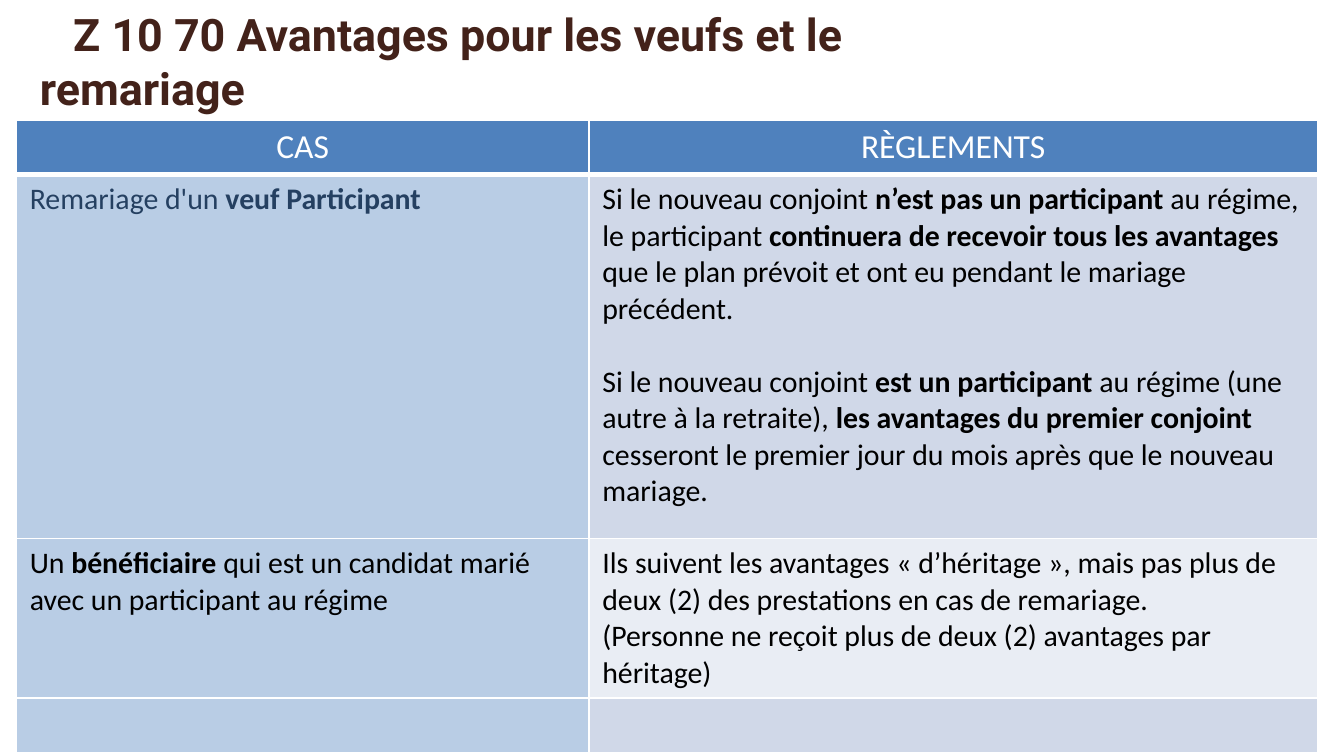
from lxml.etree import SubElement
from pptx import Presentation
from pptx.dml.color import RGBColor
from pptx.enum.text import MSO_ANCHOR as Anchor, MSO_AUTO_SIZE as AutoSize, PP_ALIGN as Align
from pptx.oxml import parse_xml
from pptx.oxml.ns import nsdecls, qn
from pptx.util import Cm, Pt

WHITE = RGBColor(0xFF, 0xFF, 0xFF)
BLACK = RGBColor(0x00, 0x00, 0x00)
BROWN = RGBColor(0x43, 0x22, 0x1A)
NAVY = RGBColor(0x25, 0x40, 0x61)
BLUE = RGBColor(0x4F, 0x81, 0xBD)
LIGHT_BLUE = RGBColor(0xB9, 0xCD, 0xE5)
BAND = RGBColor(0xD0, 0xD8, 0xE8)
PALE_BAND = RGBColor(0xE9, 0xED, 0xF4)

TITLE = "Z 10 70 Avantages pour les veufs et le remariage"
TITLE_FONT = {"name": "Roboto", "size": Pt(24), "bold": True}
HEADER_FONT = {"name": "Calibri", "size": Pt(18), "bold": False}
BODY_FONT = {"name": "Calibri", "size": Pt(16)}

COLUMN_WIDTHS = (10.82, 13.77)
ROW_HEIGHTS = (1.02, 6.88, 2.95, 1.02)
HEADERS = ("CAS", "RÈGLEMENTS")
BODY_ROWS = (
    (
        ("Remariage d'un **veuf Participant**",),
        (
            "Si le nouveau conjoint **n’est pas un participant **au régime, le participant "
            "**continuera de recevoir tous les avantages **que le plan prévoit et ont eu "
            "pendant le mariage précédent.",
            "Si le nouveau conjoint **est un participant **au régime (une autre à la retraite), "
            "**les avantages du premier conjoint **cesseront le premier jour du mois après que "
            "le nouveau mariage.",
        ),
    ),
    (
        ("Un **bénéficiaire** qui est un candidat marié avec un participant au régime",),
        (
            "Ils suivent les avantages « d’héritage », mais pas plus de deux (2) des prestations "
            "en cas de remariage.",
            "(Personne ne reçoit plus de deux (2) avantages par héritage)",
        ),
    ),
    ((), ()),
)
BODY_FILLS = ((LIGHT_BLUE, BAND), (LIGHT_BLUE, PALE_BAND), (LIGHT_BLUE, BAND))


def set_format(target, values):
    for name, value in values.items():
        setattr(target, name, value)


def set_font(font, values, color):
    set_format(font, values)
    font.color.rgb = color


def add_title(slide):
    title = slide.shapes.title
    set_format(title, {"left": Cm(0.5), "top": Cm(0), "width": Cm(18), "height": Cm(2.31)})
    frame = title.text_frame
    frame.text = TITLE
    set_format(frame, {"word_wrap": True, "auto_size": AutoSize.NONE,
                       "vertical_anchor": Anchor.TOP})
    paragraph = frame.paragraphs[0]
    set_format(paragraph, {"alignment": Align.LEFT, "line_spacing": 1.0, "space_before": Pt(0)})
    paragraph._p.get_or_add_pPr().set("indent", str(Cm(0.63)))
    set_font(paragraph.runs[0].font, TITLE_FONT, BROWN)


def set_borders(cell, bottom):
    properties = cell._tc.get_or_add_tcPr()
    for index, (side, width) in enumerate((("L", 1), ("R", 1), ("T", 1), ("B", bottom))):
        line = parse_xml(f'<a:ln{side} {nsdecls("a")} w="{Pt(width)}"/>')
        fill = SubElement(line, qn("a:solidFill"))
        SubElement(fill, qn("a:srgbClr"), val=str(WHITE))
        properties.insert(index, line)


def paint_cell(cell, fill, bottom=1):
    cell.fill.solid()
    cell.fill.fore_color.rgb = fill
    set_borders(cell, bottom)


def write_header(cell, text):
    cell.text = text
    paragraph = cell.text_frame.paragraphs[0]
    paragraph.alignment = Align.CENTER
    set_font(paragraph.runs[0].font, HEADER_FONT, WHITE)
    paint_cell(cell, BLUE, bottom=3)


def write_body(cell, texts, color, gap):
    frame = cell.text_frame
    for index, text in enumerate(texts):
        paragraph = frame.add_paragraph() if index else frame.paragraphs[0]
        if index:
            paragraph.space_before = gap
        for position, part in enumerate(text.split("**")):
            if part:
                run = paragraph.add_run()
                run.text = part
                set_font(run.font, {**BODY_FONT, "bold": position % 2 == 1}, color)


def add_rules_table(slide):
    frame = slide.shapes.add_table(len(ROW_HEIGHTS), len(COLUMN_WIDTHS), Cm(0.31), Cm(2.27),
                                   Cm(sum(COLUMN_WIDTHS)), Cm(sum(ROW_HEIGHTS)))
    table = frame.table
    for column, width in zip(table.columns, COLUMN_WIDTHS):
        column.width = Cm(width)
    for row, height in zip(table.rows, ROW_HEIGHTS):
        row.height = Cm(height)
    for column, text in enumerate(HEADERS):
        write_header(table.cell(0, column), text)
    for row, (cells, fills) in enumerate(zip(BODY_ROWS, BODY_FILLS), start=1):
        for column, (texts, fill) in enumerate(zip(cells, fills)):
            cell = table.cell(row, column)
            color = NAVY if (row, column) == (1, 0) else BLACK
            write_body(cell, texts, color, Pt(19.5) if row == 1 else Pt(0))
            paint_cell(cell, fill)


def main():
    presentation = Presentation()
    set_format(presentation, {"slide_width": Cm(25.4), "slide_height": Cm(14.29)})
    slide = presentation.slides.add_slide(presentation.slide_layouts[5])
    add_title(slide)
    add_rules_table(slide)
    presentation.save("out.pptx")


if __name__ == "__main__":
    main()
